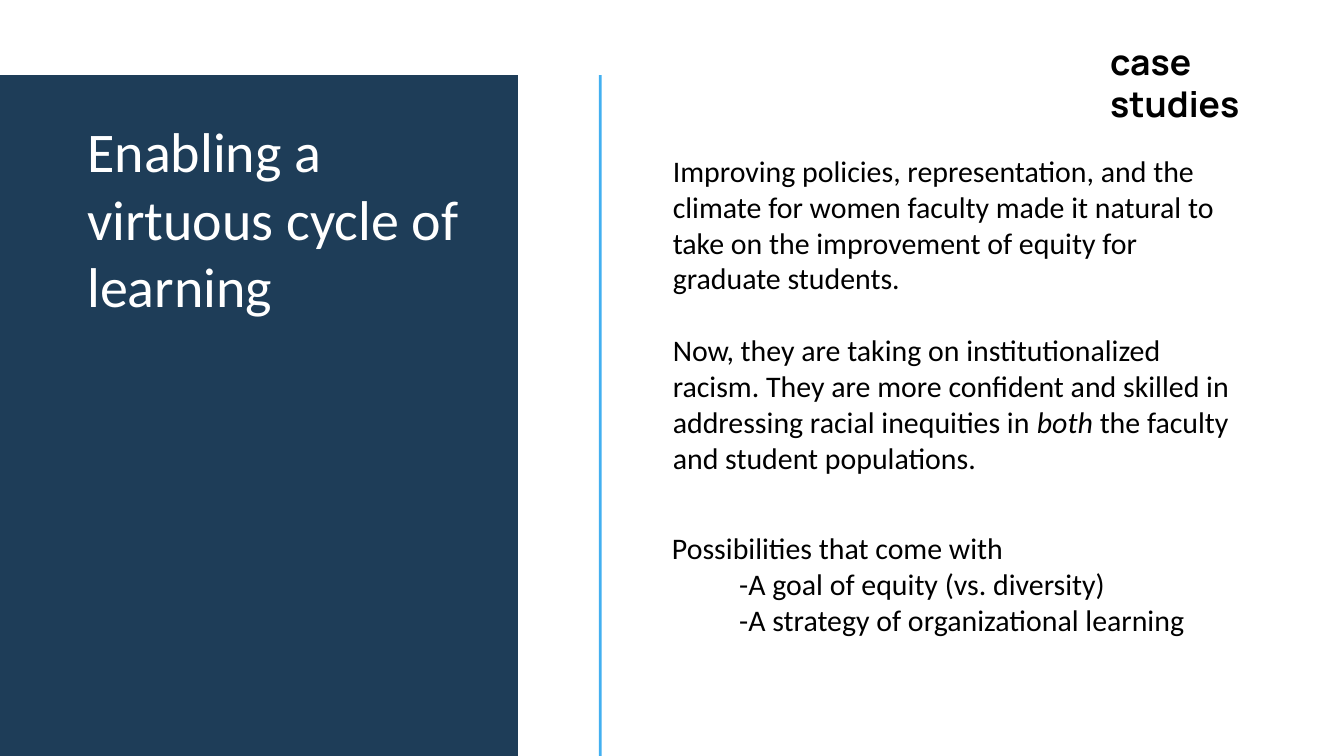
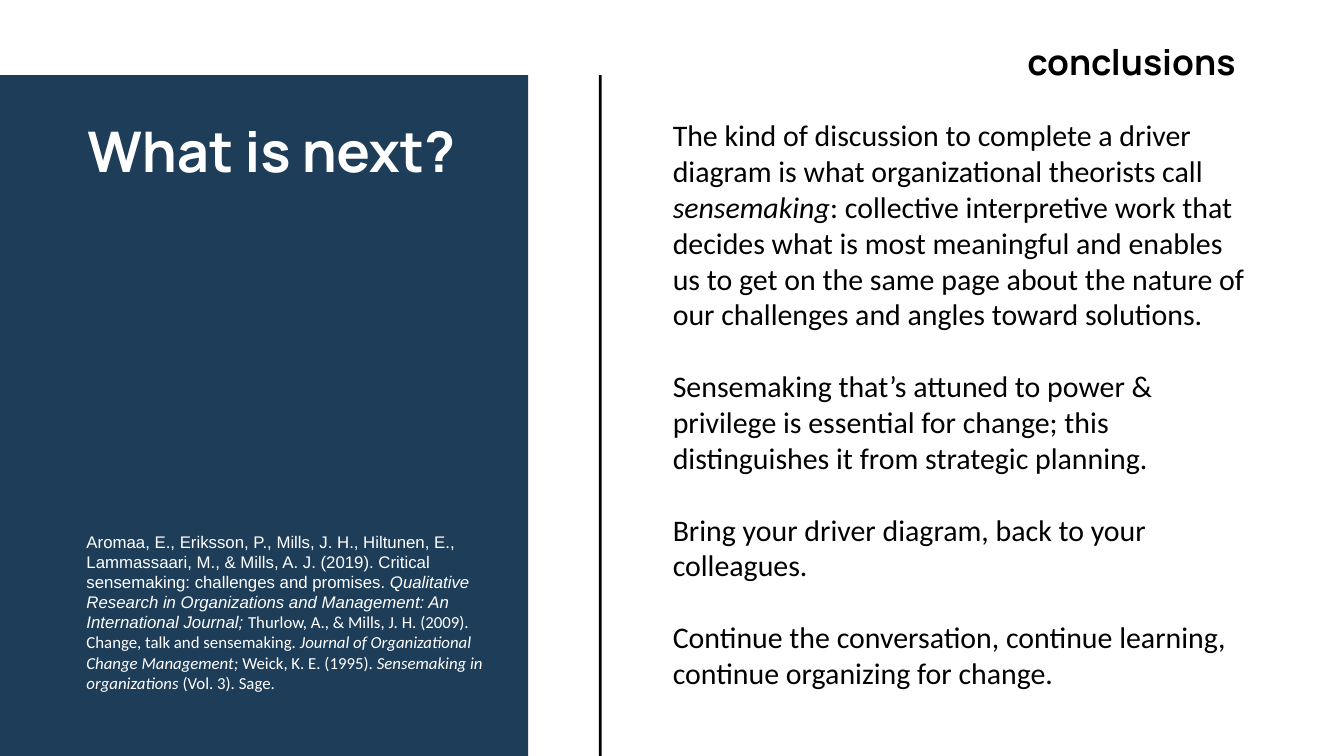
from dataclasses import dataclass

from pptx import Presentation
from pptx import slide as sl
from pptx import util as u
from pptx.dml import color as dml
from pptx.enum import shapes, text

COLOURS = {"navy": "1E3D58", "sky": "43B0F1", "black": "000000", "white": "FFFFFF"}
BODY, DISPLAY, CITATION = "Calibri", "Manrope", "Arial"
BODY_SIZE, TITLE_SIZE, HEADER_SIZE, CITATION_SIZE = 32, 60, 38, 18
LEADING = 1.2
BODY_GAP = BODY_SIZE * LEADING
COLUMN_WIDTH = 21.67


@dataclass(frozen=True)
class Area:
    left: float
    top: float
    width: float
    height: float

    def lengths(self) -> list[u.Length]:
        return [u.Cm(value) for value in (self.left, self.top, self.width, self.height)]


@dataclass(frozen=True)
class Span:
    words: str
    italic: bool = False
    font: str | None = None


@dataclass(frozen=True)
class Para:
    spans: tuple[Span, ...]
    indent: float = 0


@dataclass(frozen=True)
class Frame:
    band_left: float
    rule_colour: str
    title: str
    title_font: str
    title_height: float
    header: str
    header_left: float
    header_width: float


def plain(words: str, indent: float = 0) -> Para:
    return Para((Span(words),), indent)


def add_block(page: sl.Slide, area: Area, colour: str) -> None:
    block = page.shapes.add_shape(shapes.MSO_SHAPE.RECTANGLE, *area.lengths())
    block.shadow.inherit = False
    block.fill.solid()
    block.fill.fore_color.rgb = dml.RGBColor.from_string(COLOURS[colour])
    block.line.fill.background()


def add_text(page: sl.Slide, area: Area, paras: list[Para], *, size: float,
             font: str = BODY, colour: str = "black", bold: bool = False,
             gap: float = 0, padded: bool = False) -> None:
    frame = page.shapes.add_textbox(*area.lengths()).text_frame
    frame.word_wrap = True
    frame.vertical_anchor = text.MSO_ANCHOR.TOP
    frame.margin_left = frame.margin_right = u.Cm(0.25 if padded else 0)
    frame.margin_top = frame.margin_bottom = u.Cm(0.13 if padded else 0)
    for index, para in enumerate(paras):
        line = frame.add_paragraph() if index else frame.paragraphs[0]
        line.line_spacing = u.Pt(size * LEADING)
        line.space_before = u.Pt(gap if index else 0)
        if para.indent:
            line._p.get_or_add_pPr().set("marL", str(u.Cm(para.indent)))
        for span in para.spans:
            for part, words in enumerate(span.words.split("\n")):
                if part:
                    line.add_line_break()
                run = line.add_run()
                run.text = words
                run.font.size = u.Pt(size)
                run.font.name = span.font or font
                run.font.bold = bold
                run.font.italic = span.italic
                run.font.color.rgb = dml.RGBColor.from_string(COLOURS[colour])


def add_page(deck, frame: Frame) -> sl.Slide:
    page = deck.slides.add_slide(deck.slide_layouts[6])
    add_block(page, Area(frame.band_left, 2.84, 20.62, 26.77), "navy")
    add_block(page, Area(22.64, 2.84, 0.1, 27.25), frame.rule_colour)
    display = frame.title_font == DISPLAY
    add_text(page, Area(2.79, 4.42, 15.19, frame.title_height),
             [plain(frame.title, 0.51)], size=TITLE_SIZE,
             font=frame.title_font, colour="white", bold=display)
    add_text(page, Area(frame.header_left, 1.37, frame.header_width, 1.88),
             [plain(frame.header)], size=HEADER_SIZE, font=DISPLAY,
             bold=True, padded=True)
    return page


def add_learning_page(deck) -> None:
    page = add_page(deck, Frame(-1.04, "sky", "Enabling a virtuous cycle of learning",
                                BODY, 9.4, "case studies", 41.71, 7.75))
    add_text(page, Area(25.43, 5.77, COLUMN_WIDTH, 12.34), [
        plain("Improving policies, representation, and the climate for women faculty "
              "made it natural to\ntake on the improvement of equity for graduate students."),
        Para((
            Span("Now, they are taking on institutionalized racism. They are more "
                 "confident and skilled in addressing racial inequities in "),
            Span("both ", italic=True),
            Span("the faculty and student populations."),
        )),
    ], size=BODY_SIZE, gap=BODY_GAP)
    add_text(page, Area(25.4, 20.04, COLUMN_WIDTH, 4.11), [
        plain("Possibilities that come with"),
        plain("-A goal of equity (vs. diversity)", 2.54),
        plain("-A strategy of organizational learning", 2.54),
    ], size=BODY_SIZE)


def add_next_page(deck) -> None:
    page = add_page(deck, Frame(-0.66, "black", "What is next?",
                                DISPLAY, 4.27, "conclusions", 38.58, 10.44))
    add_text(page, Area(25.43, 4.42, COLUMN_WIDTH, 24.64), [
        Para((
            Span("The kind of discussion to complete a driver diagram is what "
                 "organizational theorists call "),
            Span("sensemaking", italic=True),
            Span(": collective interpretive work that decides what is most meaningful "
                 "and enables us to get on the same page about the nature of our "
                 "challenges and angles toward solutions."),
        )),
        plain("Sensemaking that’s attuned to power & privilege is essential for change; "
              "this distinguishes it from strategic planning."),
        plain("Bring your driver diagram, back to your colleagues."),
        plain("Continue the conversation, continue learning, continue organizing for change."),
    ], size=BODY_SIZE, gap=BODY_GAP)
    add_text(page, Area(3.02, 19.96, 16.94, 6.4), [Para((
        Span("Aromaa, E., Eriksson, P., Mills, J. H., Hiltunen, E., Lammassaari, M., "
             "& Mills, A. J. (2019). Critical sensemaking: challenges and promises. ",
             font=CITATION),
        Span("Qualitative Research in Organizations and Management: "
             "An International Journal; ", italic=True, font=CITATION),
        Span("Thurlow, A., & Mills, J. H. (2009). Change, talk and sensemaking. "),
        Span("Journal of Organizational Change Management; ", italic=True),
        Span("Weick, K. E. (1995). "),
        Span("Sensemaking in organizations", italic=True),
        Span(" (Vol. 3). Sage."),
    ))], size=CITATION_SIZE, colour="white", padded=True)


def main() -> None:
    deck = Presentation()
    deck.slide_width, deck.slide_height = u.Cm(50.8), u.Cm(28.58)
    add_learning_page(deck)
    add_next_page(deck)
    deck.save("out.pptx")


if __name__ == "__main__":
    main()
